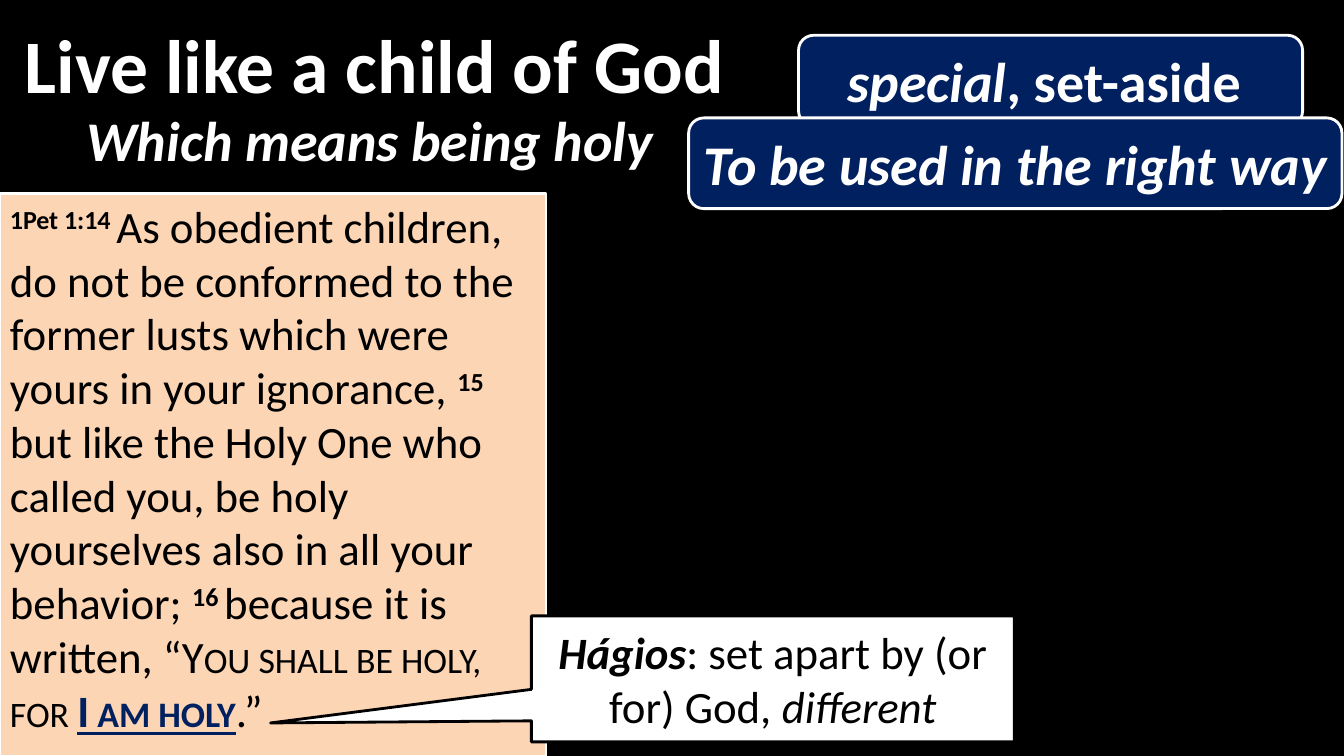
from dataclasses import dataclass

from pptx import Presentation
from pptx.dml.color import RGBColor
from pptx.enum.shapes import MSO_SHAPE as Shape
from pptx.enum.text import MSO_ANCHOR as Anchor, MSO_AUTO_SIZE as AutoSize, PP_ALIGN as Align
from pptx.slide import Slide
from pptx.text.text import TextFrame
from pptx.util import Inches, Pt

COLORS = {"black": "000000", "white": "FFFFFF", "navy": "002060", "peach": "FCD5B5"}
FONT = "Calibri"


@dataclass(frozen=True)
class Run:
    text: str
    bold: bool = False
    italic: bool = False
    raised: bool = False
    small_caps: bool = False
    underline: bool = False
    color: str = ""


@dataclass(frozen=True)
class Box:
    kind: Shape
    at: tuple[float, float, float, float]
    runs: tuple[Run, ...]
    size: int
    color: str
    fill: str = ""
    line: str = ""
    line_width: float = 2
    align: Align = Align.CENTER
    anchor: Anchor = Anchor.MIDDLE
    adjustments: tuple[float, ...] = ()


TITLE_AT = (0.1, 0.17, 7.23, 0.92)
TITLE = Run("Live like a child of God", bold=True)

VERSES = (
    Run("1Pet 1:14 ", bold=True, raised=True),
    Run("As obedient children, do not be conformed to the former lusts which were "
        "yours in your ignorance, "),
    Run("15 ", bold=True, raised=True),
    Run("but like the Holy One who called you, be holy yourselves also in all your behavior; "),
    Run("16 ", bold=True, raised=True),
    Run("because it is written, “"),
    Run("You shall be holy, for ", small_caps=True),
    Run("I am holy", bold=True, small_caps=True, underline=True, color="navy"),
    Run(".”"),
)

BOXES = (
    Box(Shape.ROUNDED_RECTANGLE, (0, 1, 7.33, 0.75),
        (Run("Which means being holy", bold=True, italic=True),), 40, "white"),
    Box(Shape.RECTANGLE, (0, 1.92, 5.42, 5.58), VERSES, 32, "black", "peach", "white", 1.5,
        Align.LEFT, Anchor.TOP),
    Box(Shape.RECTANGULAR_CALLOUT, (5.27, 6.11, 4.79, 1.25),
        (Run("Hágios", bold=True, italic=True), Run(": set apart by (or for) God, "),
         Run("different", italic=True)),
        32, "black", "white", "black", adjustments=(-1.04, 0.35)),
    Box(Shape.ROUNDED_RECTANGLE, (7.92, 0.35, 5, 0.9),
        (Run("special", bold=True, italic=True), Run(", set-aside ", bold=True)),
        40, "white", "navy", "white"),
    Box(Shape.ROUNDED_RECTANGLE, (6.83, 1.17, 6.48, 0.9),
        (Run("To be used in the right way", bold=True, italic=True),),
        40, "white", "navy", "white"),
)


def rgb(name: str) -> RGBColor:
    return RGBColor.from_string(COLORS[name])


def write_runs(tf: TextFrame, runs: tuple[Run, ...], size: int, color: str,
               align: Align, anchor: Anchor) -> None:
    tf.word_wrap = True
    tf.auto_size = AutoSize.NONE
    tf.vertical_anchor = anchor
    p = tf.paragraphs[0]
    p.alignment = align
    for run in runs:
        r = p.add_run()
        r.text = run.text
        r.font.name = FONT
        r.font.size = Pt(size)
        r.font.bold = run.bold
        r.font.italic = run.italic
        r.font.underline = run.underline
        r.font.color.rgb = rgb(run.color or color)
        props = r._r.get_or_add_rPr()
        if run.raised:
            props.set("baseline", "30000")
        if run.small_caps:
            props.set("cap", "small")


def add_title(s: Slide) -> None:
    title = s.shapes.title
    title.left, title.top, title.width, title.height = map(Inches, TITLE_AT)
    write_runs(title.text_frame, (TITLE,), 54, "white", Align.CENTER, Anchor.MIDDLE)


def add_box(s: Slide, box: Box) -> None:
    sp = s.shapes.add_shape(box.kind, *map(Inches, box.at))
    sp.shadow.inherit = False
    for i, value in enumerate(box.adjustments):
        sp.adjustments[i] = value
    if box.fill:
        sp.fill.solid()
        sp.fill.fore_color.rgb = rgb(box.fill)
    else:
        sp.fill.background()
    if box.line:
        sp.line.color.rgb = rgb(box.line)
        sp.line.width = Pt(box.line_width)
    else:
        sp.line.fill.background()
    write_runs(sp.text_frame, box.runs, box.size, box.color, box.align, box.anchor)


def main() -> None:
    prs = Presentation()
    prs.slide_width, prs.slide_height = Inches(13.33), Inches(7.5)
    s = prs.slides.add_slide(prs.slide_layouts.get_by_name("Title Only"))
    s.background.fill.solid()
    s.background.fill.fore_color.rgb = rgb("black")
    add_title(s)
    for box in BOXES:
        add_box(s, box)
    prs.save("out.pptx")


if __name__ == "__main__":
    main()
